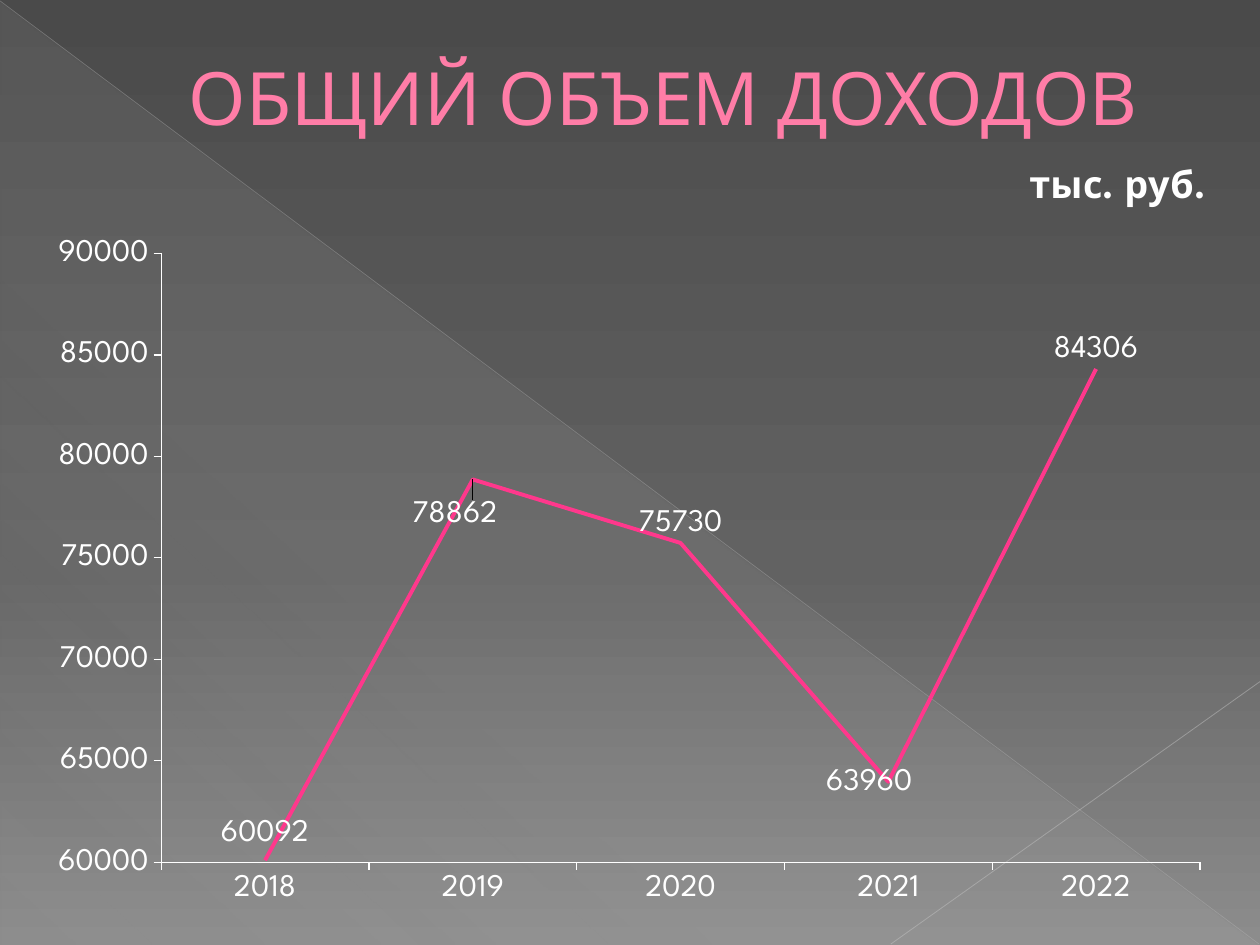
from lxml import etree
from pptx import Presentation
from pptx.chart.data import CategoryChartData
from pptx.dml.color import RGBColor
from pptx.enum.chart import XL_CHART_TYPE as ChartType, XL_LABEL_POSITION as LabelPosition
from pptx.enum.chart import XL_MARKER_STYLE as MarkerStyle, XL_TICK_MARK as TickMark
from pptx.enum.shapes import MSO_CONNECTOR as Connector, MSO_SHAPE as Shape
from pptx.enum.text import MSO_ANCHOR as Anchor, PP_ALIGN as Align
from pptx.oxml import parse_xml
from pptx.oxml.ns import nsdecls, qn
from pptx.util import Pt

COLORS = {
    "title": "FF7DA7", "series": "FF388C", "text": "FFFFFF",
    "top": "4A4A4A", "middle": "626262", "bottom": "8C8C8C",
    "wedge": "D2D2D2", "diagonal": "BFBFBF", "corner": "C6C6C6",
}
FONT = "League Spartan"


def color(name):
    return RGBColor.from_string(COLORS[name])


def format_font(font, size, name="text", bold=False):
    font.name, font.size, font.bold = FONT, Pt(size), bold
    font.color.rgb = color(name)


def write_text(frame, text, size=18, name="text", bold=False, align=Align.CENTER, margin=0):
    paragraph = frame.paragraphs[0]
    paragraph.alignment = align
    if margin:
        paragraph._p.get_or_add_pPr().set("marL", str(Pt(margin)))
    run = paragraph.add_run()
    run.text = text
    format_font(run.font, size, name, bold)


def set_alpha(parent, percent):
    etree.SubElement(parent, qn("a:alpha")).set("val", str(percent * 1000))


def set_gradient(fill, owner, stops, angle):
    """Stops are (position, colour name, opacity), all in percent."""
    fill.gradient()
    gradient = owner.find(".//" + qn("a:gradFill"))
    stop_list = gradient.find(qn("a:gsLst"))
    for stop in list(stop_list):
        stop_list.remove(stop)
    for position, name, opacity in stops:
        stop = etree.SubElement(stop_list, qn("a:gs"), pos=str(position * 1000))
        set_alpha(etree.SubElement(stop, qn("a:srgbClr"), val=COLORS[name]), opacity)
    gradient.find(qn("a:lin")).set("ang", str(angle * 60000))


def set_layout(parent, index, **values):
    """Insert a manual chart layout as the child at the given index."""
    settings = "".join(f'<c:{key} val="{value}"/>' for key, value in values.items())
    parent.insert(index, parse_xml(
        f'<c:layout {nsdecls("c")}><c:manualLayout>{settings}</c:manualLayout></c:layout>'))


def replace_layout(parent, index, **values):
    for layout in parent.findall(qn("c:layout")):
        parent.remove(layout)
    set_layout(parent, index, **values)


class SlideBuilder:
    def __init__(self, slide):
        self.slide = slide

    def background(self, stops, angle):
        set_gradient(self.slide.background.fill, self.slide.element, stops, angle)

    def wedge(self, left, top, width, height, stops, angle):
        shape = self.slide.shapes.add_shape(
            Shape.RIGHT_TRIANGLE, Pt(left), Pt(top), Pt(width), Pt(height))
        shape.shadow.inherit = False
        shape.line.fill.background()
        set_gradient(shape.fill, shape._element.spPr, stops, angle)

    def line(self, start, end, name, width, opacity):
        points = [Pt(value) for value in (*start, *end)]
        connector = self.slide.shapes.add_connector(Connector.STRAIGHT, *points)
        connector.line.width = Pt(width)
        connector.line.color.rgb = color(name)
        properties = connector._element.spPr
        set_alpha(properties.find(".//" + qn("a:srgbClr")), opacity)
        etree.SubElement(properties, qn("a:effectLst"))

    def text(self, left, top, width, height, text, **text_format):
        box = self.slide.shapes.add_textbox(Pt(left), Pt(top), Pt(width), Pt(height))
        box.text_frame.word_wrap = True
        box.text_frame.vertical_anchor = Anchor.MIDDLE
        write_text(box.text_frame, text, **text_format)

    def line_chart(self, left, top, width, height, title, values, label_shifts):
        data = CategoryChartData()
        data.categories = list(values)
        data.add_series("Series 1", list(values.values()))
        chart = self.slide.shapes.add_chart(
            ChartType.LINE, Pt(left), Pt(top), Pt(width), Pt(height), data).chart
        format_font(chart.font, 18)
        chart.has_legend = False

        # Unit caption at the top right, above the plot
        write_text(chart.chart_title.text_frame, title, size=21.6, bold=True)
        chart.chart_title.include_in_layout = False
        replace_layout(chart.chart_title._element, 1,
                       xMode="edge", yMode="edge", x=0.83, y=0.02)
        replace_layout(chart._chartSpace.chart.plotArea, 0, layoutTarget="inner",
                       xMode="edge", yMode="edge", x=0.106, y=0.14, w=0.873, h=0.787)

        # Axes
        for axis in (chart.category_axis, chart.value_axis):
            axis.has_major_gridlines = False
            axis.major_tick_mark = TickMark.OUTSIDE
            axis.minor_tick_mark = TickMark.NONE
            axis.format.line.color.rgb = color("text")
            axis.format.line.width = Pt(0.75)
            format_font(axis.tick_labels.font, 18)
        chart.value_axis.minimum_scale = 60000
        chart.value_axis.maximum_scale = 90000
        chart.value_axis.major_unit = 5000

        # Series and its labels
        chart.plots[0].vary_by_categories = False
        series = chart.plots[0].series[0]
        series.smooth = False
        series.marker.style = MarkerStyle.NONE
        series.format.line.color.rgb = color("series")
        series.format.line.width = Pt(2.25)
        labels = series.data_labels
        labels.show_value = True
        labels.position = LabelPosition.ABOVE
        format_font(labels.font, 18)
        for index, (x, y) in label_shifts.items():
            label = series.points[index].data_label
            label.position = LabelPosition.ABOVE
            format_font(label.font, 18)
            set_layout(label._dLbl, 1, x=x, y=y)


def main():
    presentation = Presentation()
    presentation.slide_width, presentation.slide_height = Pt(720), Pt(540)
    builder = SlideBuilder(presentation.slides.add_slide(presentation.slide_layouts[6]))

    # Backdrop
    builder.background([(0, "top", 100), (60, "middle", 100), (100, "bottom", 100)], 90)
    builder.wedge(0.5, 1, 719, 539,
                  [(0, "wedge", 10), (70, "wedge", 8), (100, "wedge", 1)], 133)
    builder.line((0, 0.5), (719.5, 539.5), "diagonal", 0.39, 35)
    builder.line((720, 389.5), (509, 539.5), "corner", 0.47, 45)

    # Heading
    builder.text(36, 21, 648, 68, "ОБЩИЙ ОБЪЕМ ДОХОДОВ", size=42, name="title", margin=38)

    # Income by year
    income = {"2018": 60092, "2019": 78862, "2020": 75730, "2021": 63960, "2022": 84306}
    shifts = {0: (0, -0.01), 1: (-0.015, 0.07), 3: (-0.016, 0.026)}
    builder.line_chart(20, 83, 680, 442, "тыс. руб.", income, shifts)

    presentation.save("out.pptx")


if __name__ == "__main__":
    main()
